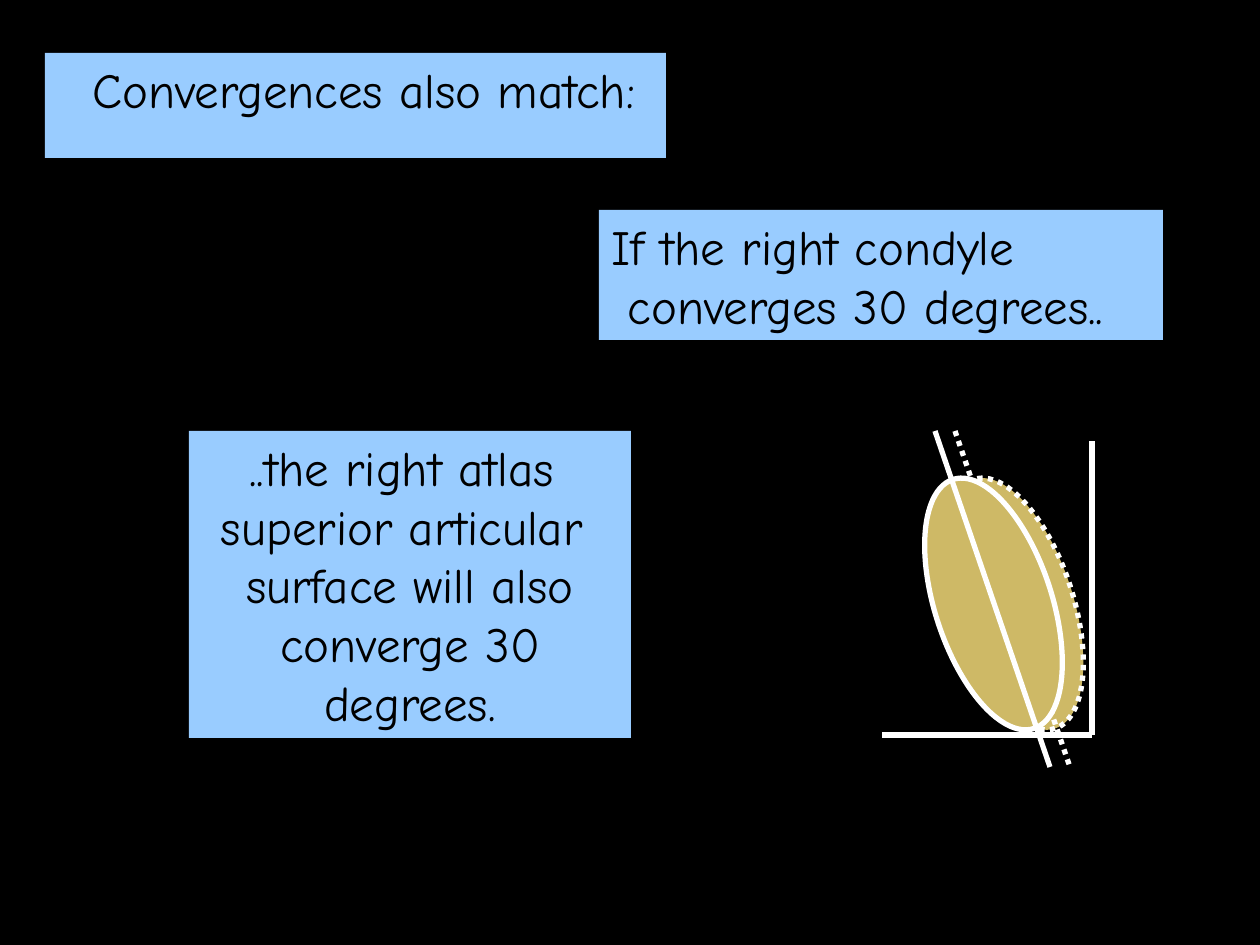
import pptx
import pptx.util
import pptx.dml.color
import pptx.enum.dml
import pptx.enum.shapes
import pptx.enum.text
import pptx.oxml.ns
import lxml.etree

SCALE = 914400 // 126
FONT = "Comic Neue"
BLACK, WHITE, BLUE, BONE = "000000", "FFFFFF", "99CCFF", "CEB966"
LEFT = pptx.enum.text.PP_ALIGN.LEFT
CENTER = pptx.enum.text.PP_ALIGN.CENTER

TITLE = ((45, 53, 621, 72), CENTER, [" Convergences also match:"])
NOTES = [
    ((599, 210, 564, 130), LEFT, ["If the right condyle", " converges 30 degrees.."]),
    ((189, 431, 442, 307), CENTER, [
        "..the right atlas ", "superior articular ", "surface will also",
        " converge 30 ", "degrees."]),
]
CORNER = (1092, 735)
AXES = [(1092, 441), (882, 735)]
CONDYLE_SIZE = (117, 262)
CONDYLE_TOP = 473
TILT = 342
AXIS_RUN = (115, 336)
AXIS_TOP = 431
CONDYLES = [(956, 955, True), (935, 935, False)]


def px(*lengths):
    return [length * SCALE for length in lengths]


def color(value):
    return pptx.dml.color.RGBColor.from_string(value)


def fill(shape, value):
    shape.fill.solid()
    shape.fill.fore_color.rgb = color(value)


def outline(shape, dotted=False):
    shape.line.color.rgb = color(WHITE)
    shape.line.width = pptx.util.Pt(3)
    if dotted:
        shape.line.dash_style = pptx.enum.dml.MSO_LINE.ROUND_DOT


def write(box, place, align, lines):
    box.left, box.top, box.width, box.height = px(*place)
    fill(box, BLUE)
    frame = box.text_frame
    frame.word_wrap = False
    frame.auto_size = pptx.enum.text.MSO_AUTO_SIZE.SHAPE_TO_FIT_TEXT
    frame.vertical_anchor = pptx.enum.text.MSO_ANCHOR.TOP
    frame.text = "\n".join(lines)
    for para in frame.paragraphs:
        para.alignment = align
        for span in para.runs:
            span.font.name = FONT
            span.font.size = pptx.util.Pt(28)
            span.font.color.rgb = color(BLACK)


def draw_line(page, start, end, dotted=False):
    line = page.shapes.add_connector(
        pptx.enum.shapes.MSO_CONNECTOR.STRAIGHT, *px(*start, *end))
    outline(line, dotted)
    lxml.etree.SubElement(line._element.spPr, pptx.oxml.ns.qn("a:effectLst"))


def draw_condyle(page, left, dotted):
    condyle = page.shapes.add_shape(
        pptx.enum.shapes.MSO_SHAPE.OVAL, *px(left, CONDYLE_TOP, *CONDYLE_SIZE))
    condyle.shadow.inherit = False
    condyle.rotation = TILT
    fill(condyle, BONE)
    outline(condyle, dotted)


def main():
    deck = pptx.Presentation()
    deck.slide_width, deck.slide_height = px(1260, 945)
    page = deck.slides.add_slide(deck.slide_layouts[5])
    fill(page.background, BLACK)
    write(page.shapes.title, *TITLE)
    for note in NOTES:
        write(page.shapes.add_textbox(0, 0, 0, 0), *note)
    for index, (left, axis_left, dotted) in enumerate(CONDYLES):
        draw_condyle(page, left, dotted)
        if index == 0:
            for end in AXES:
                draw_line(page, CORNER, end)
        axis_end = (axis_left + AXIS_RUN[0], AXIS_TOP + AXIS_RUN[1])
        draw_line(page, (axis_left, AXIS_TOP), axis_end, dotted)
    deck.save("out.pptx")


if __name__ == "__main__":
    main()
